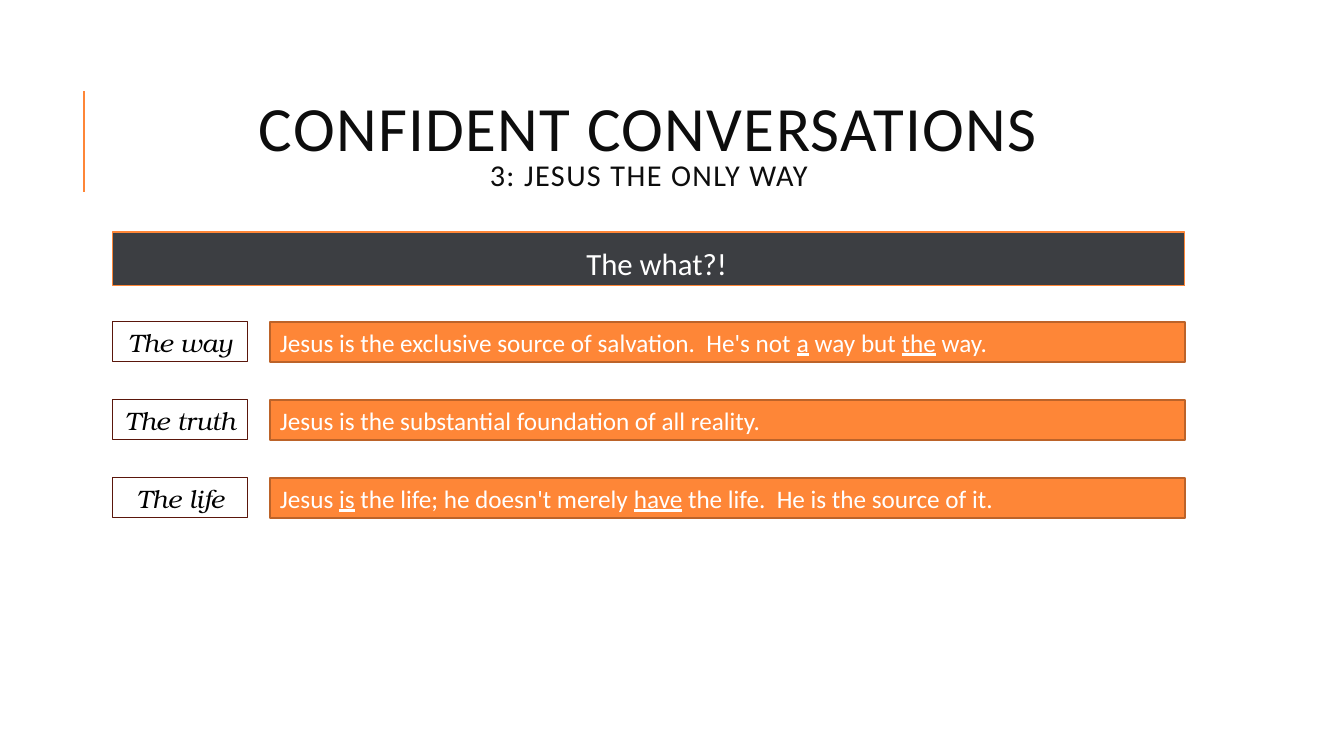
"""Build the "Confident Conversations" slide about the way, the truth and the life."""
from lxml.etree import SubElement
from pptx import Presentation
from pptx.dml.color import RGBColor
from pptx.enum.shapes import MSO_CONNECTOR, MSO_SHAPE
from pptx.enum.text import MSO_ANCHOR, MSO_AUTO_SIZE, PP_ALIGN
from pptx.oxml.ns import qn
from pptx.util import Pt

PX = 914400 / 100.8
ORANGE = RGBColor(0xFE, 0x86, 0x37)
DARK_ORANGE = RGBColor(0xBC, 0x63, 0x29)
MAROON = RGBColor(0x5A, 0x16, 0x0B)
CHARCOAL = RGBColor(0x3C, 0x3E, 0x42)
NEAR_BLACK = RGBColor(0x0D, 0x0D, 0x0D)
BLACK = RGBColor(0, 0, 0)
WHITE = RGBColor(0xFF, 0xFF, 0xFF)

LEFT, RIGHT = 113, 1185
LABEL_WIDTH, STATEMENT_LEFT = 135, 270
ROW_TOP, ROW_PITCH, ROW_HEIGHT = 322, 78, 40
ROWS = [
    ("The way", ["Jesus is the exclusive source of salvation.  He's not ", "a",
                 " way but ", "the", " way."]),
    ("The truth", ["Jesus is the substantial foundation of all reality."]),
    ("The life", ["Jesus ", "is", " the life; he doesn't merely ", "have",
                  " the life.  He is the source of it."]),
]


def px(length):
    return round(length * PX)


def add_box(left, top, width, height, fill, line, line_width):
    shape = slide.shapes.add_shape(
        MSO_SHAPE.RECTANGLE, px(left), px(top), px(width), px(height))
    shape.shadow.inherit = False
    shape.fill.solid()
    shape.fill.fore_color.rgb = fill
    shape.line.color.rgb = line
    shape.line.width = Pt(line_width)
    return shape


presentation = Presentation()
presentation.slide_width, presentation.slide_height = px(1344), px(756)
slide = presentation.slides.add_slide(presentation.slide_layouts[5])

accent = slide.shapes.add_connector(
    MSO_CONNECTOR.STRAIGHT, px(84), px(192), px(84), px(91))
accent.line.color.rgb = ORANGE
accent.line.width = Pt(1.5)
SubElement(accent.element.spPr, qn("a:effectLst"))

title = slide.shapes.title
title.left, title.top, title.width, title.height = px(LEFT), px(65), px(RIGHT - LEFT), px(165)
title.text_frame.text = "CONFIDENT CONVERSATIONS\v3: JESUS THE ONLY WAY"
title.text_frame.auto_size = MSO_AUTO_SIZE.NONE
title.text_frame.vertical_anchor = MSO_ANCHOR.MIDDLE
paragraph = title.text_frame.paragraphs[0]
paragraph.alignment = PP_ALIGN.CENTER
paragraph.line_spacing = 0.8
for run, size in zip(paragraph.runs, (45, 21.6)):
    run.font.name = "Calibri"
    run.font.size = Pt(size)
    run.font.color.rgb = NEAR_BLACK
    run.font._element.set("spc", "100")

banner = add_box(LEFT, 232, RIGHT - LEFT, 54, CHARCOAL, ORANGE, 0.75)
frame = banner.text_frame
frame.text = "The what?!"
frame.vertical_anchor = MSO_ANCHOR.TOP
frame.margin_left = frame.margin_right = frame.margin_top = frame.margin_bottom = px(5)
paragraph = frame.paragraphs[0]
paragraph.alignment = PP_ALIGN.CENTER
paragraph.line_spacing = 1.2
paragraph.space_after = Pt(2)
paragraph.font.name = "Calibri"
paragraph.runs[0].font.name = "Calibri"
paragraph.runs[0].font.size = Pt(22)
paragraph.runs[0].font.color.rgb = WHITE
properties = paragraph._p.get_or_add_pPr()
properties.set("marL", str(px(10)))
properties.set("indent", str(px(-10)))
bullet = SubElement(properties, qn("a:buChar"))
bullet.set("char", " ")
properties.append(properties.find(qn("a:defRPr")))

for index, (name, segments) in enumerate(ROWS):
    top = ROW_TOP + index * ROW_PITCH
    statement = add_box(STATEMENT_LEFT, top, RIGHT - STATEMENT_LEFT, ROW_HEIGHT,
                        ORANGE, DARK_ORANGE, 1.25)
    paragraph = statement.text_frame.paragraphs[0]
    paragraph.alignment = PP_ALIGN.LEFT
    for position, segment in enumerate(segments):
        run = paragraph.add_run()
        run.text = segment
        run.font.name = "Calibri"
        run.font.size = Pt(18)
        run.font.color.rgb = WHITE
        run.font.underline = position % 2 == 1

    label = add_box(LEFT, top, LABEL_WIDTH, ROW_HEIGHT, WHITE, MAROON, 0.75)
    label.text_frame.text = name
    label.text_frame.vertical_anchor = MSO_ANCHOR.TOP
    label.text_frame.auto_size = MSO_AUTO_SIZE.SHAPE_TO_FIT_TEXT
    paragraph = label.text_frame.paragraphs[0]
    paragraph.alignment = PP_ALIGN.CENTER
    font = paragraph.runs[0].font
    font.name = "TeX Gyre Bonum"
    font.size = Pt(18)
    font.italic = True
    font.color.rgb = BLACK

presentation.save("out.pptx")
